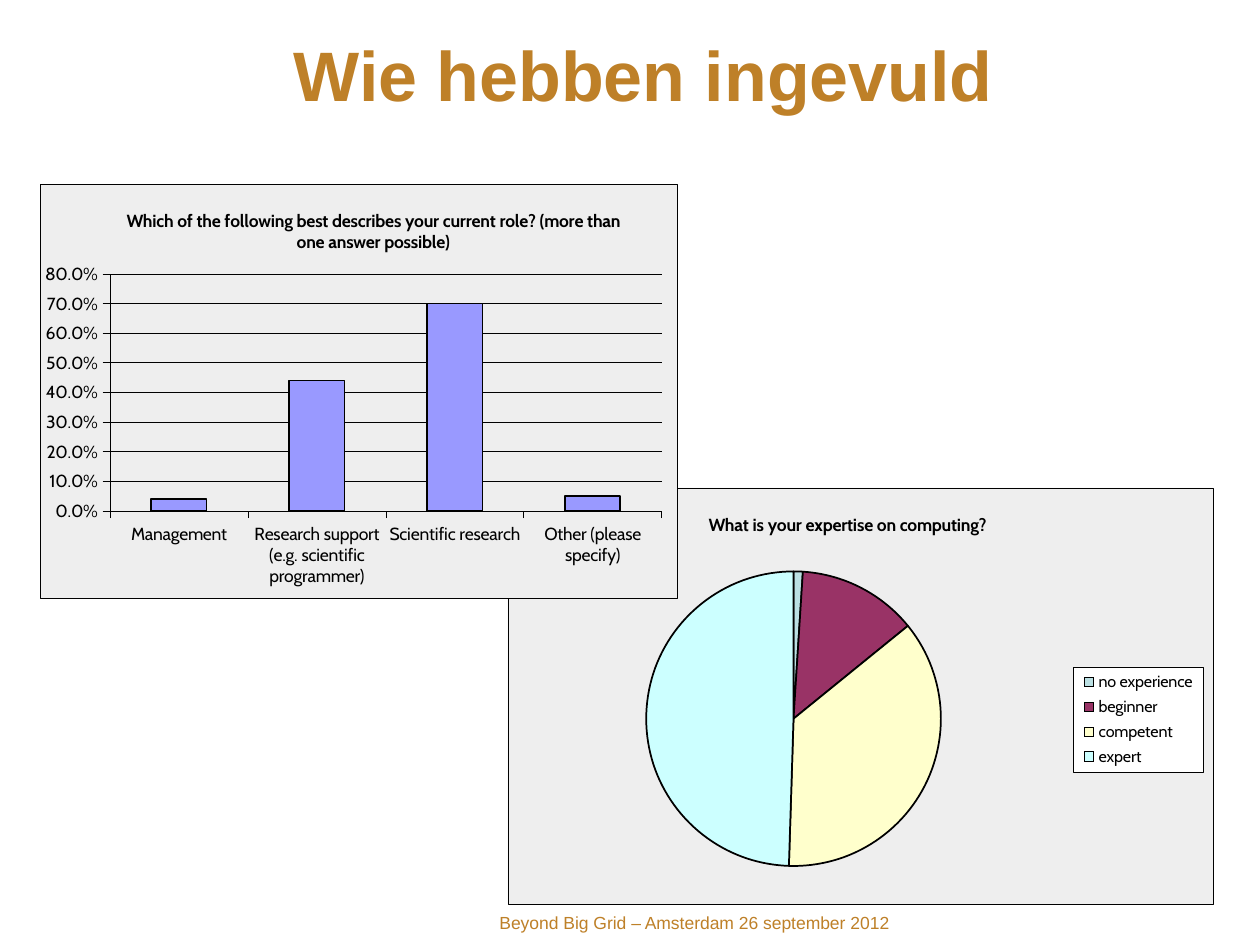
from dataclasses import dataclass

from lxml import etree
from pptx import Presentation
from pptx.chart.data import CategoryChartData
from pptx.dml.color import RGBColor
from pptx.enum.chart import XL_CHART_TYPE, XL_LEGEND_POSITION, XL_TICK_MARK
from pptx.enum.text import MSO_ANCHOR, PP_ALIGN
from pptx.oxml import parse_xml
from pptx.oxml.ns import qn
from pptx.util import Inches, Pt

COLUMN, PIE = XL_CHART_TYPE.COLUMN_CLUSTERED, XL_CHART_TYPE.PIE
LEGEND_RIGHT = XL_LEGEND_POSITION.RIGHT
TICK_OUTSIDE = XL_TICK_MARK.OUTSIDE
TOP, CENTER = MSO_ANCHOR.TOP, PP_ALIGN.CENTER
NAMESPACES = (
    'xmlns:c="http://schemas.openxmlformats.org/drawingml/2006/chart" '
    'xmlns:a="http://schemas.openxmlformats.org/drawingml/2006/main"'
)


@dataclass(frozen=True)
class Theme:
    accent: str = "BE8028"
    ink: str = "000000"
    panel: str = "EEEEEE"
    legend_panel: str = "FFFFFF"
    bar: str = "9999FF"
    slices: tuple = ("BBE0E3", "993366", "FFFFCC", "CCFFFF")
    text_font: str = "Arial"
    chart_font: str = "Cabin"
    title_size: float = 40
    small_size: float = 10
    legend_size: float = 9.2
    hairline: float = 0.25
    outline: float = 1


THEME = Theme()


def style_font(font, size, color, name, bold=False):
    font.size, font.name, font.bold = Pt(size), name, bold
    font.color.rgb = RGBColor.from_string(color)


def style_line(line, width):
    line.width = Pt(width)
    line.color.rgb = RGBColor.from_string(THEME.ink)


def style_mark(mark, color):
    mark.fill.solid()
    mark.fill.fore_color.rgb = RGBColor.from_string(color)
    style_line(mark.line, THEME.outline)


def panel_xml(color, bordered=True):
    border = (
        f'<a:ln w="{Pt(THEME.hairline)}"><a:solidFill><a:srgbClr val="{THEME.ink}"/></a:solidFill></a:ln>'
        if bordered
        else "<a:ln><a:noFill/></a:ln>"
    )
    return parse_xml(
        f'<c:spPr {NAMESPACES}><a:solidFill><a:srgbClr val="{color}"/></a:solidFill>{border}</c:spPr>'
    )


def set_layout(parent, index, inner=False, **fractions):
    for previous in parent.findall(qn("c:layout")):
        parent.remove(previous)
    layout = etree.Element(qn("c:layout"))
    manual = etree.SubElement(layout, qn("c:manualLayout"))
    settings = {"layoutTarget": "inner"} if inner else {}
    settings.update(xMode="edge", yMode="edge", **fractions)
    for tag, value in settings.items():
        etree.SubElement(manual, qn(f"c:{tag}")).set("val", str(value))
    parent.insert(index, layout)


def add_panel_chart(slide, box, kind, question, answers, title_at, plot_at, number_format):
    data = CategoryChartData(number_format=number_format)
    data.categories = list(answers)
    data.add_series("Series 1", list(answers.values()))
    chart = slide.shapes.add_chart(kind, *map(Inches, box), data).chart
    style_font(chart.font, THEME.small_size, THEME.ink, THEME.chart_font)
    chart.has_legend = False
    chart.has_title = True
    heading = chart.chart_title.text_frame
    heading.text = question
    style_font(heading.paragraphs[0].font, THEME.small_size, THEME.ink, THEME.chart_font, bold=True)
    chart.chart_title.include_in_layout = False
    root = chart.element
    set_layout(root.find(".//" + qn("c:title")), 1, **dict(zip("xy", title_at)))
    plot_area = root.find(".//" + qn("c:plotArea"))
    set_layout(plot_area, 0, inner=True, **dict(zip("xywh", plot_at)))
    plot_area.append(panel_xml(THEME.panel, bordered=False))
    root.find(qn("c:chart")).addnext(panel_xml(THEME.panel))
    return chart


def add_role_chart(slide, box):
    roles = {
        "Management": 0.04,
        "Research support (e.g. scientific programmer)": 0.44,
        "Scientific research": 0.7,
        "Other (please specify)": 0.05,
    }
    question = "Which of the following best describes your current role? (more than one answer possible)"
    chart = add_panel_chart(
        slide, box, COLUMN, question, roles, (0.13, 0.05), (0.109, 0.217, 0.866, 0.572), "0.0%"
    )
    bars = chart.plots[0]
    bars.gap_width = 150
    bars.vary_by_categories = False
    style_mark(bars.series[0].format, THEME.bar)
    for axis in (chart.category_axis, chart.value_axis):
        axis.major_tick_mark = TICK_OUTSIDE
        style_line(axis.format.line, THEME.hairline)
        style_font(axis.tick_labels.font, THEME.small_size, THEME.ink, THEME.chart_font)
    share = chart.value_axis
    share.minimum_scale, share.maximum_scale, share.major_unit = 0, 0.8, 0.1
    share.tick_labels.number_format = "0.0%"
    share.tick_labels.number_format_is_linked = False
    share.has_major_gridlines = True
    style_line(share.major_gridlines.format.line, THEME.hairline)


def add_expertise_chart(slide, box):
    levels = {"no experience": 1, "beginner": 13, "competent": 36, "expert": 49}
    chart = add_panel_chart(
        slide, box, PIE, "What is your expertise on computing?", levels,
        (0.28, 0.05), (0.196, 0.2, 0.418, 0.709), "0",
    )
    pie = chart.plots[0]
    pie.vary_by_categories = True
    for index, color in enumerate(THEME.slices):
        style_mark(pie.series[0].points[index].format, color)
    chart.has_legend = True
    legend = chart.legend
    legend.position = LEGEND_RIGHT
    legend.include_in_layout = False
    style_font(legend.font, THEME.legend_size, THEME.ink, THEME.chart_font)
    key = chart.element.find(".//" + qn("c:legend"))
    set_layout(key, 1, x=0.802, y=0.43, w=0.184, h=0.252)
    key.find(qn("c:txPr")).addprevious(panel_xml(THEME.legend_panel))


def fill_text(frame, text, size, bold=False):
    frame.margin_left = frame.margin_right = frame.margin_top = frame.margin_bottom = 0
    frame.word_wrap = True
    frame.vertical_anchor = TOP
    frame.text = text
    line = frame.paragraphs[0]
    line.alignment = CENTER
    style_font(line.font, size, THEME.accent, THEME.text_font, bold)


def add_title(slide, box):
    title = slide.shapes.title
    title.left, title.top, title.width, title.height = map(Inches, box)
    fill_text(title.text_frame, "Wie hebben ingevuld", THEME.title_size, bold=True)


def add_footer(slide, box):
    footer = slide.shapes.add_textbox(*map(Inches, box))
    fill_text(footer.text_frame, "Beyond Big Grid – Amsterdam 26 september 2012", THEME.small_size)


def main():
    deck = Presentation()
    deck.slide_width, deck.slide_height = Inches(10), Inches(7.5)
    slide = deck.slides.add_slide(deck.slide_layouts[5])
    add_title(slide, (1.5, 0.25, 7.21, 1.17))
    add_footer(slide, (2.68, 7.24, 5.66, 0.26))
    add_expertise_chart(slide, (4.03, 3.87, 5.6, 3.31))
    add_role_chart(slide, (0.32, 1.46, 5.06, 3.29))
    deck.save("out.pptx")


if __name__ == "__main__":
    main()
